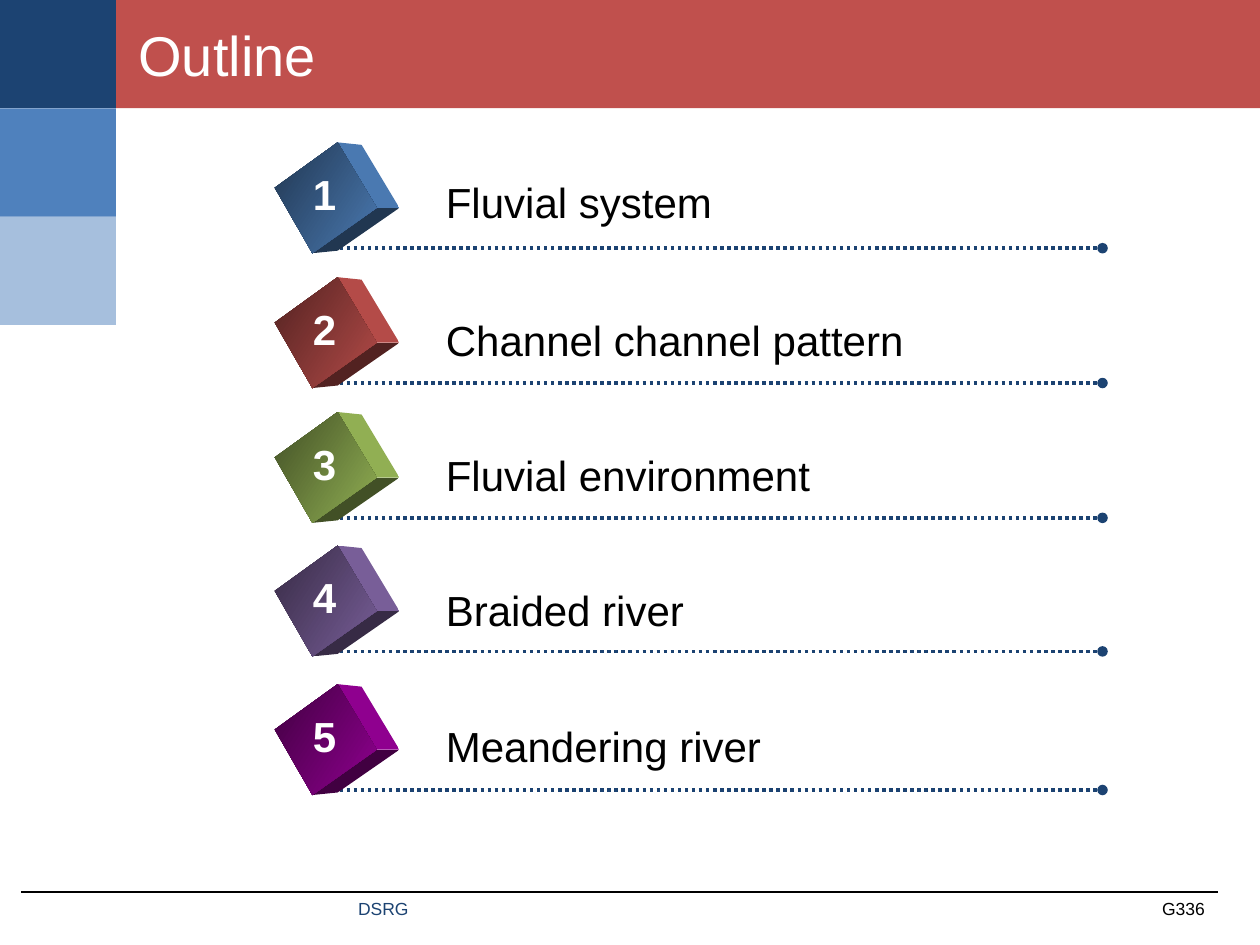
"""Build the Outline slide: five numbered cubes with labels on dotted rules."""
import pptx
import pptx.util
import pptx.dml.color
import pptx.enum.dml
import pptx.enum.shapes
import pptx.enum.text
import pptx.oxml
import lxml.etree

COLORS = {"red": "C0504D", "navy": "1C4372", "blue": "4F81BD", "green": "9BBB59",
          "violet": "8064A2", "magenta": "990099", "black": "000000", "white": "FFFFFF"}
ALIGN = pptx.enum.text.PP_ALIGN
ANCHOR = pptx.enum.text.MSO_ANCHOR

deck = pptx.Presentation()
deck.slide_width, deck.slide_height = pptx.util.Inches(10), pptx.util.Inches(7.5)
slide = deck.slides.add_slide(deck.slide_layouts[6])
column, row = deck.slide_width / 10, deck.slide_height / 7.5


def write(words, left, top, width, height, color, size, bold=False,
          align=ALIGN.LEFT, anchor=ANCHOR.TOP, wrap=True):
    box = slide.shapes.add_textbox(int(left * column), int(top * row),
                                   int(width * column), int(height * row))
    frame = box.text_frame
    for key, value in {"word_wrap": wrap, "vertical_anchor": anchor}.items():
        setattr(frame, key, value)
    paragraph = frame.paragraphs[0]
    paragraph.alignment = align
    run = paragraph.add_run()
    run.text = words
    for key, value in {"name": "Arial", "size": pptx.util.Pt(size), "bold": bold}.items():
        setattr(run.font, key, value)
    run.font.color.rgb = pptx.dml.color.RGBColor.from_string(COLORS[color])


def rule(left, right, level, color, weight):
    line = slide.shapes.add_connector(
        pptx.enum.shapes.MSO_CONNECTOR.STRAIGHT, int(left * column), int(level * row),
        int(right * column), int(level * row))
    line.line.color.rgb = pptx.dml.color.RGBColor.from_string(COLORS[color])
    line.line.width = pptx.util.Pt(weight)
    lxml.etree.SubElement(line._element.spPr, pptx.oxml.ns.qn("a:effectLst"))
    return line


band, side = 0.86, 0.92
for left, level, width, color, opacity in [
        (side, 0, 10 - side, "red", 100), (0, 0, side, "navy", 100),
        (0, 1, side, "blue", 100), (0, 2, side, "blue", 50)]:
    panel = slide.shapes.add_shape(
        pptx.enum.shapes.MSO_SHAPE.RECTANGLE, int(left * column), int(level * band * row),
        int(width * column), int(band * row))
    panel.shadow.inherit = False
    panel.line.fill.background()
    panel.fill.solid()
    panel.fill.fore_color.rgb = pptx.dml.color.RGBColor.from_string(COLORS[color])
    if opacity < 100:
        tint = panel._element.spPr.find(".//" + pptx.oxml.ns.qn("a:srgbClr"))
        lxml.etree.SubElement(tint, pptx.oxml.ns.qn("a:alpha"), val=str(opacity * 1000))

rule(0.17, 9.67, 7.08, "black", 0.75)
write("G336", 7.33, 7.08, 2.33, 0.27, "black", 10, align=ALIGN.RIGHT)
write("DSRG", 0.17, 7.08, 3.17, 0.42, "navy", 10, align=ALIGN.RIGHT)
write("Outline", 1, 0.12, 8, 0.62, "white", 32, anchor=ANCHOR.MIDDLE)

west, north, south, inner = (2.18, -0.48), (2.68, -0.84), (2.48, 0.04), (2.99, -0.32)
far_north, far_east, far_south = (2.87, -0.82), (3.17, -0.32), (2.68, 0.02)
CUBE_FACES = [
    ([north, far_north, far_east, inner], (0.94, 0.94)),
    ([south, inner, far_east, far_south], (0.43, 0.43)),
    ([west, north, inner, south], (0.43, 0.94)),
]
TOPICS = [
    ("Fluvial system", "blue", 1.97, 1.35),
    ("Channel channel pattern", "red", 3.04, 2.45),
    ("Fluvial environment", "green", 4.11, 3.52),
    ("Braided river", "violet", 5.17, 4.59),
    ("Meandering river", "magenta", 6.27, 5.67),
]
for number, (topic, color, level, label_top) in enumerate(TOPICS, 1):
    dotted = rule(2.64, 8.75, level, "navy", 2)
    dotted.line.dash_style = pptx.enum.dml.MSO_LINE.ROUND_DOT
    stroke = dotted.line._get_or_add_ln()
    lxml.etree.SubElement(stroke, pptx.oxml.ns.qn("a:tailEnd"), type="oval")

    base = pptx.dml.color.RGBColor.from_string(COLORS[color])
    for corners, shades in CUBE_FACES:
        outline = [(int(x * column), int((level + y) * row)) for x, y in corners]
        builder = slide.shapes.build_freeform(*outline[0])
        builder.add_line_segments(outline[1:], close=True)
        face = builder.convert_to_shape()
        face.shadow.inherit = False
        face.line.fill.background()
        face.fill.gradient()
        face.fill.gradient_angle = 327
        for stop, shade in zip(face.fill.gradient_stops, shades):
            stop.color.rgb = pptx.dml.color.RGBColor(*(int(part * shade) for part in base))

    write(str(number), 2.35, level - 0.68, 0.45, 0.58, "white", 24, bold=True,
          align=ALIGN.CENTER, wrap=False)
    write(topic, 3.44, label_top, 4.48, 0.5, "black", 24)

deck.save("out.pptx")
